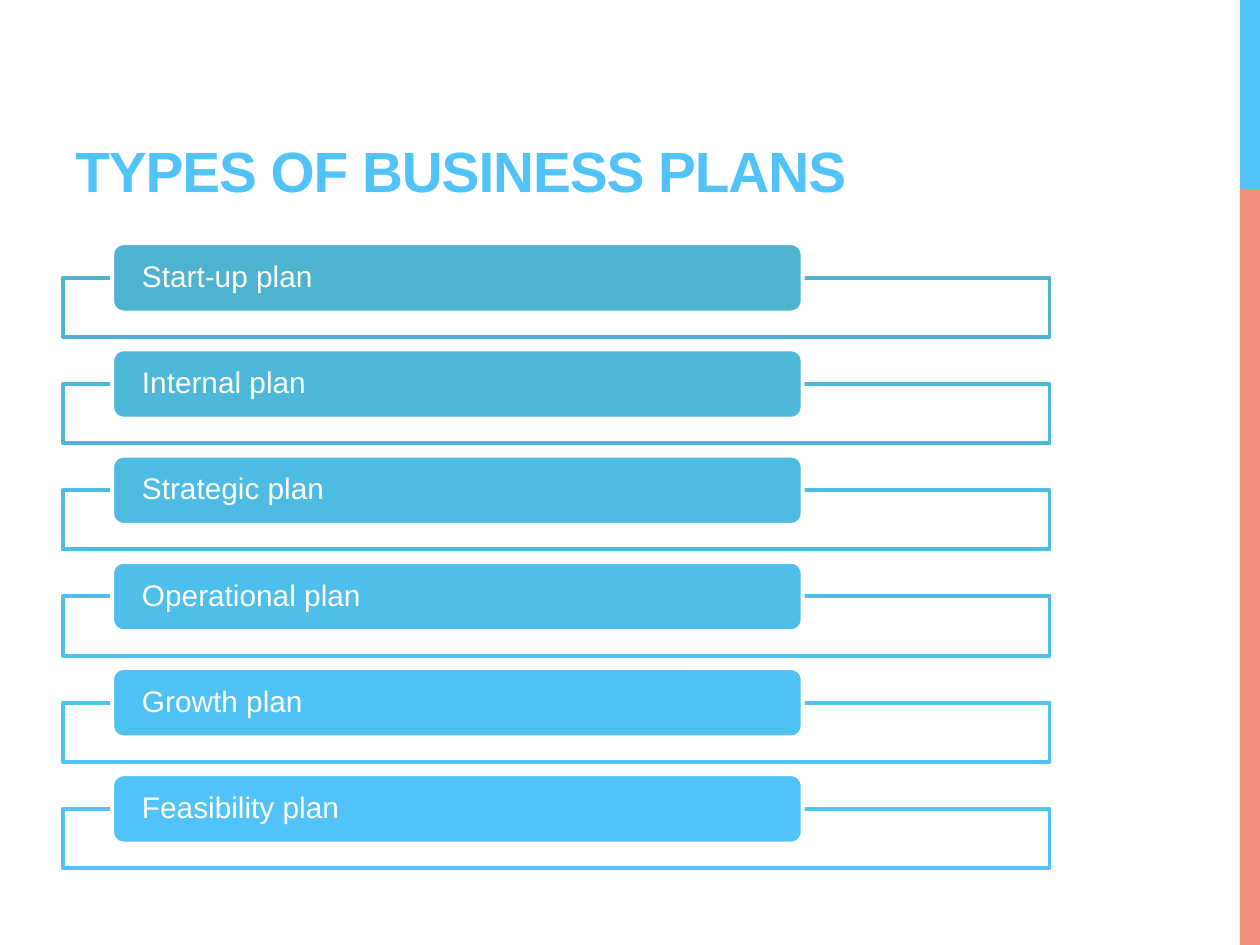
from pptx import Presentation
from pptx.dml.color import RGBColor
from pptx.enum.shapes import MSO_SHAPE
from pptx.enum.text import MSO_ANCHOR, PP_ALIGN
from pptx.util import Inches, Pt

RECTANGLE = MSO_SHAPE.RECTANGLE
ROUNDED = MSO_SHAPE.ROUNDED_RECTANGLE
WHITE = RGBColor(0xFF, 0xFF, 0xFF)
SKY = RGBColor(0x51, 0xC3, 0xF9)
CORAL = RGBColor(0xEF, 0x8E, 0x7B)
FONT = "Arial"

PLANS = [
    ("Start-up plan", RGBColor(0x4E, 0xB3, 0xCF)),
    ("Internal plan", RGBColor(0x4D, 0xB8, 0xD9)),
    ("Strategic plan", RGBColor(0x4D, 0xBB, 0xE2)),
    ("Operational plan", RGBColor(0x4E, 0xBE, 0xEA)),
    ("Growth plan", RGBColor(0x4F, 0xC1, 0xF2)),
    ("Feasibility plan", SKY),
]
FIRST_TOP = 1.93
ROW_STEP = 0.843
FRAME_DROP = 0.275

prs = Presentation()
prs.slide_width = Inches(10)
prs.slide_height = Inches(7.5)
slide = prs.slides.add_slide(prs.slide_layouts[6])


def add_block(kind, left, top, width, height, fill, line=None):
    block = slide.shapes.add_shape(
        kind, Inches(left), Inches(top), Inches(width), Inches(height))
    block.shadow.inherit = False
    block.fill.solid()
    block.fill.fore_color.rgb = fill
    if line is None:
        block.line.fill.background()
    else:
        block.line.color.rgb = line
        block.line.width = Pt(2.25)
    return block


# Side stripe
add_block(RECTANGLE, 9.84, 0, 0.16, 1.5, SKY)
add_block(RECTANGLE, 9.84, 1.5, 0.16, 6, CORAL)

# Title
title = slide.shapes.add_textbox(
    Inches(0.5), Inches(0.17), Inches(6.33), Inches(1.5))
title_frame = title.text_frame
title_frame.word_wrap = True
title_frame.vertical_anchor = MSO_ANCHOR.BOTTOM
title_frame.text = "TYPES OF BUSINESS PLANS"
title_run = title_frame.paragraphs[0].runs[0]
title_run.font.name = FONT
title_run.font.size = Pt(32.4)
title_run.font.bold = True
title_run.font.color.rgb = SKY
title_run.font._element.set("spc", "-60")

# One frame with a label bar per plan
for row, (plan, color) in enumerate(PLANS):
    top = FIRST_TOP + row * ROW_STEP
    add_block(RECTANGLE, 0.5, top + FRAME_DROP, 7.83, 0.47, WHITE, color)
    bar = add_block(ROUNDED, 0.89, top, 5.48, 0.55, color, WHITE)

    label = bar.text_frame
    label.word_wrap = True
    label.vertical_anchor = MSO_ANCHOR.MIDDLE
    # The rounded corners already inset the text by about 0.03 inches
    label.margin_left = label.margin_right = Inches(0.21)
    label.margin_top = label.margin_bottom = 0
    label.text = plan
    paragraph = label.paragraphs[0]
    paragraph.alignment = PP_ALIGN.LEFT
    paragraph.line_spacing = 0.9
    font = paragraph.runs[0].font
    font.name = FONT
    font.size = Pt(17)
    font.color.rgb = WHITE

prs.save("out.pptx")
